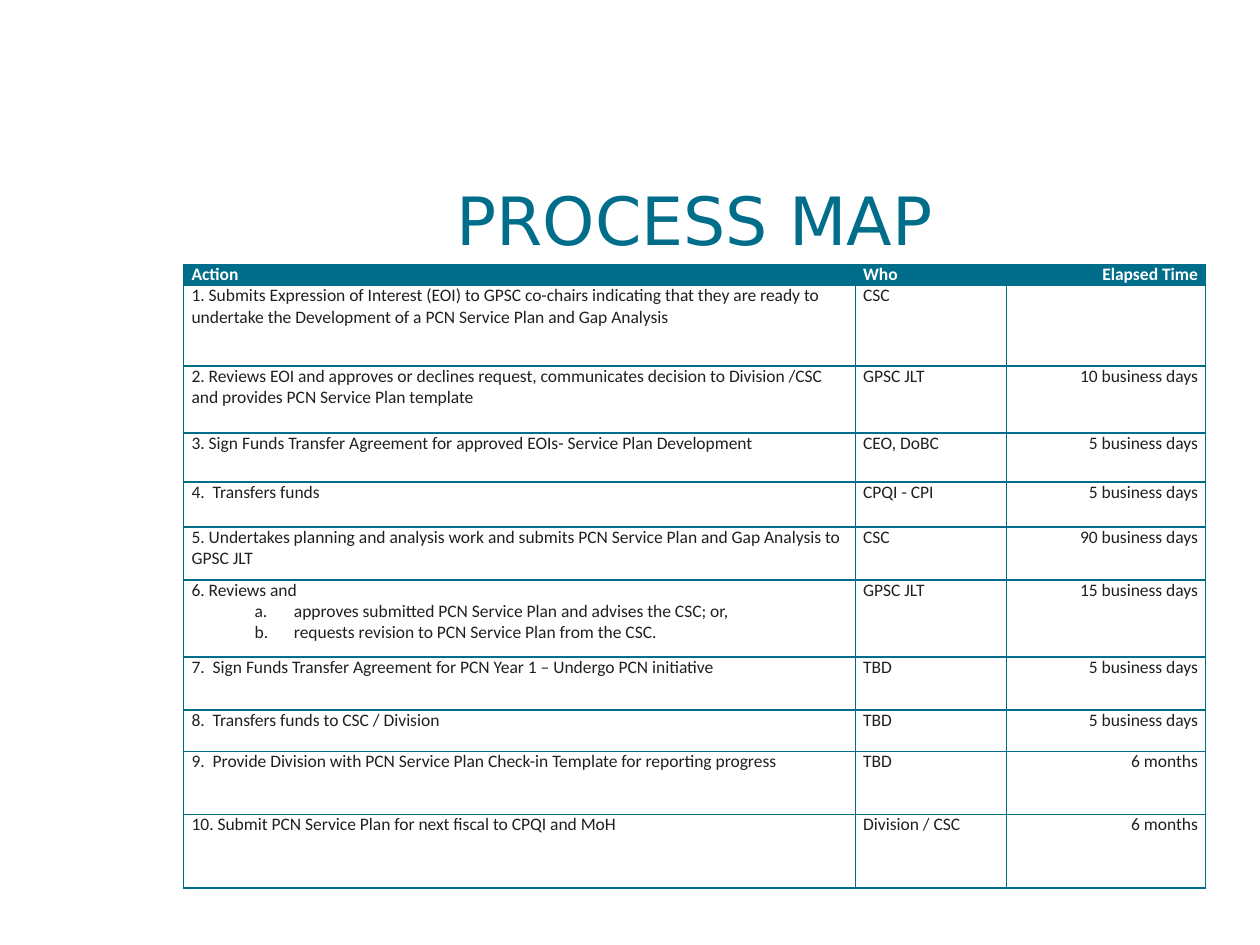
from dataclasses import dataclass

from pptx import Presentation
from pptx.dml.color import RGBColor as RGB
from pptx.enum.text import MSO_ANCHOR as ANCHOR, PP_ALIGN as ALIGN
from pptx.oxml.ns import qn
from pptx.util import Pt
from lxml.etree import SubElement as Sub


@dataclass(frozen=True)
class Theme:
    teal: RGB = RGB(0x00, 0x6D, 0x8A)
    ink: RGB = RGB(0x23, 0x1F, 0x20)
    white: RGB = RGB(0xFF, 0xFF, 0xFF)
    title_font: str = "DejaVu Sans"
    body_font: str = "Calibri"
    title_size: int = 38
    body_size: int = 10


THEME = Theme()

# Table content: action, who, elapsed time
HEADER = ("Action", "Who", "Elapsed Time")
STEPS = [
    ("1. Submits Expression of Interest (EOI) to GPSC co-chairs indicating that they are "
     "ready to undertake the Development of a PCN Service Plan and Gap Analysis", "CSC", ""),
    ("2. Reviews EOI and approves or declines request, communicates decision to "
     "Division /CSC and provides PCN Service Plan template", "GPSC JLT", "10 business days"),
    ("3. Sign Funds Transfer Agreement for approved EOIs- Service Plan Development",
     "CEO, DoBC", "5 business days"),
    ("4.  Transfers funds", "CPQI - CPI", "5 business days"),
    ("5. Undertakes planning and analysis work and submits PCN Service Plan and "
     "Gap Analysis to GPSC JLT", "CSC", "90 business days"),
    ("6. Reviews and\n"
     "approves submitted PCN Service Plan and advises the CSC; or,\n"
     "requests revision to PCN Service Plan from the CSC.", "GPSC JLT", "15 business days"),
    ("7.  Sign Funds Transfer Agreement for PCN Year 1 – Undergo PCN initiative",
     "TBD", "5 business days"),
    ("8.  Transfers funds to CSC / Division", "TBD", "5 business days"),
    ("9.  Provide Division with PCN Service Plan Check-in Template for reporting progress",
     "TBD", "6 months"),
    ("10. Submit PCN Service Plan for next fiscal to CPQI and MoH",
     "Division / CSC", "6 months"),
]
ALIGNS = (ALIGN.LEFT, ALIGN.LEFT, ALIGN.RIGHT)
COL_WIDTHS = (383.8, 86.4, 113.8)
ROW_HEIGHTS = (12, 46, 38.5, 28, 25.7, 30.2, 44, 30.5, 23.5, 36, 42)


def style_font(font, name, size, color, bold=False):
    font.name, font.size, font.bold = name, Pt(size), bold
    font.color.rgb = color


def add_title(slide, text):
    sp = slide.shapes.add_textbox(Pt(88), Pt(83), Pt(618), Pt(84))
    tf = sp.text_frame
    tf.word_wrap = True
    tf.vertical_anchor = ANCHOR.MIDDLE
    tf.text = text
    p = tf.paragraphs[0]
    p.alignment = ALIGN.CENTER
    style_font(p.runs[0].font, THEME.title_font, THEME.title_size, THEME.teal)


def add_borders(cell):
    tc_pr = cell._tc.get_or_add_tcPr()
    for side in ("a:lnL", "a:lnR", "a:lnT", "a:lnB"):
        ln = Sub(tc_pr, qn(side), w=str(Pt(1)))
        fill = Sub(ln, qn("a:solidFill"))
        Sub(fill, qn("a:srgbClr"), val=str(THEME.teal))


def letter_item(p):
    """Make a paragraph an indented a., b. list item."""
    p.level = 1
    p_pr = p._p.get_or_add_pPr()
    p_pr.set("marL", str(Pt(58.5)))
    p_pr.set("indent", str(-Pt(22.5)))
    Sub(p_pr, qn("a:buFont"), typeface="+mj-lt")
    Sub(p_pr, qn("a:buAutoNum"), type="alphaLcPeriod")


def fill_cell(cell, text, align, is_header):
    cell.margin_left = cell.margin_right = Pt(4.5)
    cell.margin_top = cell.margin_bottom = 0
    add_borders(cell)
    if is_header:
        cell.fill.solid()
        cell.fill.fore_color.rgb = THEME.teal
    else:
        cell.fill.background()
    cell.text_frame.text = text
    color = THEME.white if is_header else THEME.ink
    for i, p in enumerate(cell.text_frame.paragraphs):
        p.alignment = align
        if i:
            letter_item(p)
        for r in p.runs:
            style_font(r.font, THEME.body_font, THEME.body_size, color, is_header)


def add_process_table(slide):
    rows = [HEADER, *STEPS]
    frame = slide.shapes.add_table(len(rows), len(HEADER), Pt(105), Pt(151),
                                   Pt(sum(COL_WIDTHS)), Pt(sum(ROW_HEIGHTS)))
    table = frame.table
    table.horz_banding = False
    for column, width in zip(table.columns, COL_WIDTHS):
        column.width = Pt(width)
    for r, (row, height) in enumerate(zip(rows, ROW_HEIGHTS)):
        table.rows[r].height = Pt(height)
        for c, (text, align) in enumerate(zip(row, ALIGNS)):
            fill_cell(table.cell(r, c), text, align, is_header=r == 0)


def main():
    prs = Presentation()
    prs.slide_width, prs.slide_height = Pt(720), Pt(540)
    slide = prs.slides.add_slide(prs.slide_layouts[6])
    add_title(slide, "PROCESS MAP")
    add_process_table(slide)
    prs.save("out.pptx")


if __name__ == "__main__":
    main()
